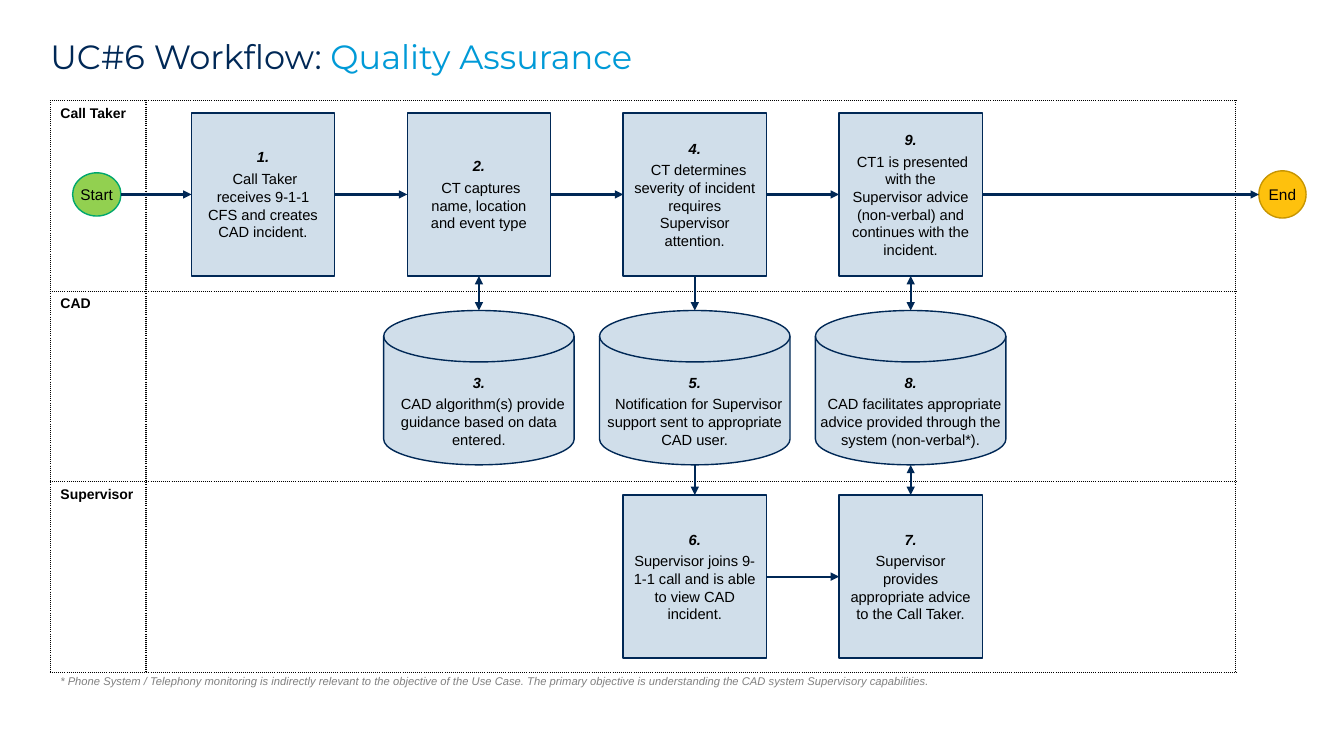
from dataclasses import dataclass
from typing import Any

from lxml.etree import SubElement
from pptx import Presentation
from pptx.dml.color import RGBColor
from pptx.enum.shapes import MSO_CONNECTOR, MSO_SHAPE
from pptx.enum.text import MSO_ANCHOR, MSO_AUTO_SIZE, PP_ALIGN
from pptx.oxml.ns import qn
from pptx.util import Cm, Pt


@dataclass(frozen=True)
class Theme:
    """Colours, fonts and type sizes of the slide."""
    navy: str = "002856"
    sky: str = "009AD7"
    ink: str = "000000"
    grey: str = "808080"
    pale: str = "D0DEEA"
    green: str = "92D050"
    green_edge: str = "00A76D"
    amber: str = "FEC10D"
    amber_edge: str = "C79501"
    heading_font: str = "Montserrat"
    body_font: str = "Arial"
    title_size: float = 24
    lane_size: float = 10
    step_size: float = 10.5
    terminal_size: float = 11
    note_size: float = 8


THEME = Theme()


@dataclass(frozen=True)
class Form:
    """Look of one kind of node, lengths in centimetres."""
    preset: MSO_SHAPE
    width: float
    height: float
    fill: str = THEME.pale
    edge: str = THEME.navy
    size: float = THEME.step_size
    wrap: bool = True
    margins: tuple[float, float, float, float] = (0.25, 0.13, 0.25, 0.13)


@dataclass(frozen=True)
class Node:
    """One step of the workflow, placed by its centre."""
    name: str
    form: Form
    x: float
    y: float
    text: str = ""
    indent: float = 0


@dataclass(frozen=True)
class Link:
    """An arrow between two nodes."""
    source: str
    target: str
    two_way: bool = False


TASK = Form(MSO_SHAPE.RECTANGLE, 3.61, 4.11)
SYSTEM = Form(MSO_SHAPE.FLOWCHART_MAGNETIC_DISK, 4.8, 3.89, margins=(0, 0.51, 0, 0))
START = Form(MSO_SHAPE.OVAL, 1.22, 1.09, THEME.green, THEME.green_edge, THEME.terminal_size, False)
END = Form(MSO_SHAPE.OVAL, 1.19, 1.19, THEME.amber, THEME.amber_edge, THEME.terminal_size, False)

COLUMNS = [6.63 + 5.44 * index for index in range(4)]
CALL_TAKER, CAD, SUPERVISOR = 4.9, 9.77, 14.53
LANES = ["Call Taker", "CAD", "Supervisor"]

NODES = [
    Node("Start", START, 2.44, CALL_TAKER),
    Node("End", END, 32.32, CALL_TAKER),
    Node("1.", TASK, COLUMNS[0], CALL_TAKER,
         "Call Taker receives 9-1-1 CFS and creates CAD incident.", 0.1),
    Node("2.", TASK, COLUMNS[1], CALL_TAKER, "CT captures name, location and event type", 0.1),
    Node("3.", SYSTEM, COLUMNS[1], CAD,
         "CAD algorithm(s) provide guidance based on data entered.", 0.2),
    Node("4.", TASK, COLUMNS[2], CALL_TAKER,
         "CT determines severity of incident requires Supervisor attention.", 0.2),
    Node("5.", SYSTEM, COLUMNS[2], CAD,
         "Notification for Supervisor support sent to appropriate CAD user.", 0.2),
    Node("6.", TASK, COLUMNS[2], SUPERVISOR,
         "Supervisor joins 9-1-1 call and is able to view CAD incident."),
    Node("7.", TASK, COLUMNS[3], SUPERVISOR,
         "Supervisor provides appropriate advice to the Call Taker."),
    Node("8.", SYSTEM, COLUMNS[3], CAD,
         "CAD facilitates appropriate advice provided through the system (non-verbal*).", 0.2),
    Node("9.", TASK, COLUMNS[3], CALL_TAKER,
         "CT1 is presented with the Supervisor advice (non-verbal) and continues with the incident.",
         0.1),
]

LINKS = [
    Link("Start", "1."), Link("1.", "2."), Link("2.", "4."), Link("4.", "9."), Link("9.", "End"),
    Link("2.", "3.", True), Link("4.", "5."), Link("5.", "6."), Link("6.", "7."),
    Link("9.", "8.", True), Link("8.", "7.", True),
]


def add_span(para: Any, text: str, *, size: float, color: str = THEME.ink,
             font: str = THEME.body_font, bold: bool = False, italic: bool = False) -> None:
    """Append formatted text to a paragraph."""
    span = para.add_run()
    span.text = text
    span.font.size = Pt(size)
    span.font.name = font
    span.font.bold = bold
    span.font.italic = italic
    span.font.color.rgb = RGBColor.from_string(color)


def set_margins(frame: Any, margins: tuple[float, float, float, float]) -> None:
    """Set left, top, right and bottom text margins in centimetres."""
    frame.margin_left, frame.margin_top, frame.margin_right, frame.margin_bottom = map(Cm, margins)


def add_title(page: Any) -> None:
    """Draw the two-colour title."""
    box = page.shapes.add_textbox(Cm(1.27), Cm(1.02), Cm(31.32), Cm(1.22))
    box.text_frame.word_wrap = True
    set_margins(box.text_frame, (0, 0, 0, 0))
    para = box.text_frame.paragraphs[0]
    para.line_spacing = 0.9
    for text, color in (("UC#6 Workflow: ", THEME.navy), ("Quality Assurance", THEME.sky)):
        add_span(para, text, size=THEME.title_size, color=color, font=THEME.heading_font)


def add_borders(cell: Any) -> None:
    """Give a table cell dotted borders on all sides."""
    properties = cell._tc.get_or_add_tcPr()
    for position, side in enumerate(("a:lnL", "a:lnR", "a:lnT", "a:lnB")):
        line = SubElement(properties, qn(side), w=str(Pt(1)))
        SubElement(SubElement(line, qn("a:solidFill")), qn("a:srgbClr"), val=THEME.ink)
        SubElement(line, qn("a:prstDash"), val="sysDot")
        properties.insert(position, line)


def add_lanes(page: Any) -> None:
    """Draw the swimlane table."""
    table = page.shapes.add_table(len(LANES), 2, Cm(1.27), Cm(2.54), Cm(29.87), Cm(14.4)).table
    table.first_row = table.horz_banding = False
    table.columns[0].width, table.columns[1].width = Cm(2.41), Cm(27.46)
    for row, lane in enumerate(LANES):
        add_span(table.cell(row, 0).text_frame.paragraphs[0], lane,
                 size=THEME.lane_size, bold=True)
    for cell in table.iter_cells():
        cell.fill.background()
        add_borders(cell)


def add_node(page: Any, node: Node) -> Any:
    """Draw a node and return its shape."""
    form = node.form
    shape = page.shapes.add_shape(form.preset, Cm(node.x - form.width / 2),
                                  Cm(node.y - form.height / 2), Cm(form.width), Cm(form.height))
    shape.shadow.inherit = False
    shape.fill.solid()
    shape.fill.fore_color.rgb = RGBColor.from_string(form.fill)
    shape.line.color.rgb = RGBColor.from_string(form.edge)
    shape.line.width = Pt(1)
    frame = shape.text_frame
    frame.word_wrap = form.wrap
    frame.vertical_anchor = MSO_ANCHOR.MIDDLE
    set_margins(frame, form.margins)
    numbered = bool(node.text)
    add_span(frame.paragraphs[0], node.name, size=form.size, bold=numbered, italic=numbered)
    if numbered:
        para = frame.add_paragraph()
        para._p.get_or_add_pPr().set("indent", str(Cm(node.indent)))
        add_span(para, node.text, size=form.size)
    for para in frame.paragraphs:
        para.alignment = PP_ALIGN.CENTER
        para.space_after = Pt(3)
    return shape


def add_link(page: Any, link: Link, nodes: dict[str, Node], shapes: dict[str, Any]) -> None:
    """Draw an arrow rightwards or downwards, joined to rectangles."""
    source, target = nodes[link.source], nodes[link.target]
    across = source.y == target.y
    right, down = (1, 0) if across else (0, 1)
    ends = [Cm(length) for node, sign in ((source, 1), (target, -1)) for length in (
        node.x + sign * right * node.form.width / 2, node.y + sign * down * node.form.height / 2)]
    arrow = page.shapes.add_connector(MSO_CONNECTOR.STRAIGHT, *ends)
    if source.form is TASK:
        arrow.begin_connect(shapes[link.source], 3 if across else 2)
    if target.form is TASK:
        arrow.end_connect(shapes[link.target], 1 if across else 0)
    arrow.line.color.rgb = RGBColor.from_string(THEME.navy)
    arrow.line.width = Pt(1.5)
    line = arrow.line._get_or_add_ln()
    for end in ("a:headEnd", "a:tailEnd") if link.two_way else ("a:tailEnd",):
        SubElement(line, qn(end), type="triangle")
    SubElement(arrow._element.spPr, qn("a:effectLst"))


def add_note(page: Any) -> None:
    """Draw the footnote below the lanes."""
    box = page.shapes.add_textbox(Cm(1.27), Cm(16.87), Cm(22.71), Cm(0.61))
    box.text_frame.word_wrap = False
    box.text_frame.auto_size = MSO_AUTO_SIZE.SHAPE_TO_FIT_TEXT
    add_span(box.text_frame.paragraphs[0],
             "* Phone System / Telephony monitoring is indirectly relevant to the objective of the "
             "Use Case. The primary objective is understanding the CAD system Supervisory "
             "capabilities.", size=THEME.note_size, color=THEME.grey, italic=True)


def main() -> None:
    """Build the workflow slide and save it."""
    deck = Presentation()
    deck.slide_width, deck.slide_height = Cm(33.87), Cm(19.05)
    page = deck.slides.add_slide(deck.slide_layouts[6])
    add_title(page)
    add_lanes(page)
    nodes = {node.name: node for node in NODES}
    shapes = {node.name: add_node(page, node) for node in NODES}
    for link in LINKS:
        add_link(page, link, nodes, shapes)
    add_note(page)
    deck.save("out.pptx")


if __name__ == "__main__":
    main()
